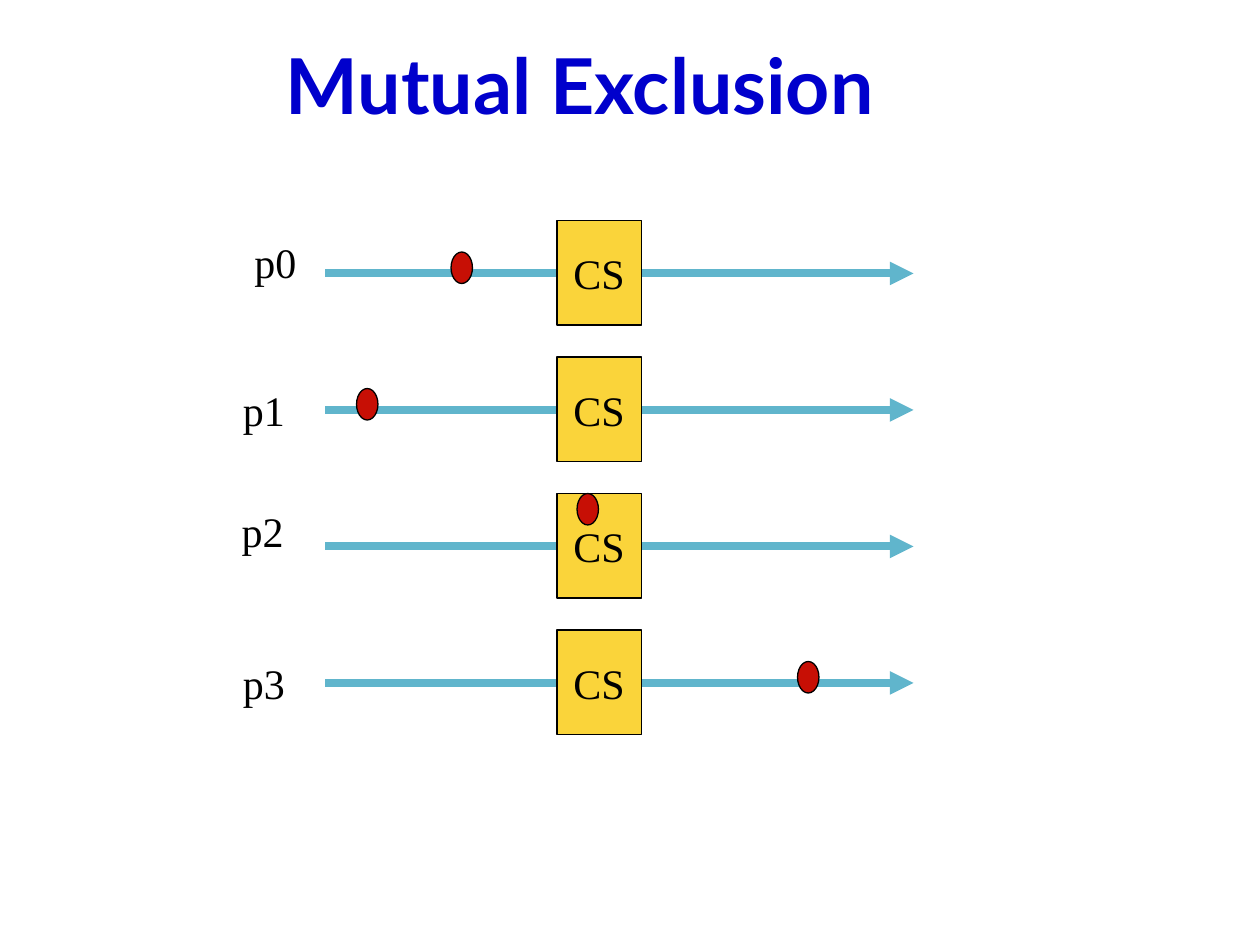
from lxml import etree
from pptx import Presentation
from pptx.dml.color import RGBColor
from pptx.enum import shapes, text
from pptx.oxml.ns import qn
from pptx.util import Inches, Pt

BLUE = RGBColor(0x00, 0x00, 0xCC)
TEAL = RGBColor(0x60, 0xB5, 0xCC)
YELLOW = RGBColor(0xFA, 0xD4, 0x3A)
RED = RGBColor(0xC7, 0x0F, 0x05)
BLACK = RGBColor(0, 0, 0)

TITLE = "Mutual Exclusion"
# process, label left, label top, token left, token drop below the box top
PROCESSES = [
    ("p0", 1.92, 1.83, 3.58, 0.25),
    ("p1", 1.83, 3.00, 2.83, 0.25),
    ("p2", 1.82, 3.96, 4.58, 0),
    ("p3", 1.83, 5.17, 6.33, 0.25),
]
FIRST_TOP, ROW_PITCH = 1.75, 13 / 12
LINE_START, LINE_END, LINE_DROP = 2.58, 7.25, 0.42
BOX_LEFT, BOX_WIDTH, BOX_HEIGHT = 4.42, 0.67, 0.83
TOKEN_WIDTH, TOKEN_HEIGHT = 0.17, 0.25


def write(shape, content, size, color, font="Times New Roman", bold=False):
    shape.text_frame.word_wrap = False
    paragraph = shape.text_frame.paragraphs[0]
    paragraph.text = content
    paragraph.font.name = font
    paragraph.font.size = Pt(size)
    paragraph.font.bold = bold
    paragraph.font.color.rgb = color
    return paragraph


def add_label(slide, content, left, top, width, height, *style):
    box = slide.shapes.add_textbox(*map(Inches, (left, top, width, height)))
    write(box, content, *style)
    box.text_frame.auto_size = text.MSO_AUTO_SIZE.SHAPE_TO_FIT_TEXT


def add_outlined(slide, kind, left, top, width, height, fill):
    shape = slide.shapes.add_shape(kind, *map(Inches, (left, top, width, height)))
    shape.shadow.inherit = False
    shape.fill.solid()
    shape.fill.fore_color.rgb = fill
    shape.line.color.rgb = BLACK
    shape.line.width = Pt(0.75)
    return shape


def add_timeline(slide, y):
    arrow = slide.shapes.add_connector(
        shapes.MSO_CONNECTOR.STRAIGHT,
        Inches(LINE_START), Inches(y), Inches(LINE_END), Inches(y))
    arrow.line.color.rgb = TEAL
    arrow.line.width = Pt(4.5)
    properties = arrow.element.spPr
    etree.SubElement(properties.find(qn("a:ln")), qn("a:tailEnd"), type="triangle")
    etree.SubElement(properties, qn("a:effectLst"))


def main():
    presentation = Presentation()
    presentation.slide_width, presentation.slide_height = Inches(10), Inches(7.5)
    slide = presentation.slides.add_slide(presentation.slide_layouts[6])
    add_label(slide, TITLE, 2.17, 0.25, 5.42, 0.83, 44, BLUE, "Lato", True)

    for row, (name, label_left, label_top, token_left, token_drop) in enumerate(PROCESSES):
        top = FIRST_TOP + row * ROW_PITCH
        add_timeline(slide, top + LINE_DROP)
        section = add_outlined(slide, shapes.MSO_SHAPE.RECTANGLE,
                               BOX_LEFT, top, BOX_WIDTH, BOX_HEIGHT, YELLOW)
        section.text_frame.vertical_anchor = text.MSO_ANCHOR.MIDDLE
        write(section, "CS", 24, BLACK).alignment = text.PP_ALIGN.CENTER
        add_outlined(slide, shapes.MSO_SHAPE.OVAL, token_left, top + token_drop,
                     TOKEN_WIDTH, TOKEN_HEIGHT, RED)
        add_label(slide, name, label_left, label_top, 0.53, 0.5, 24, BLACK)

    presentation.save("out.pptx")


if __name__ == "__main__":
    main()
